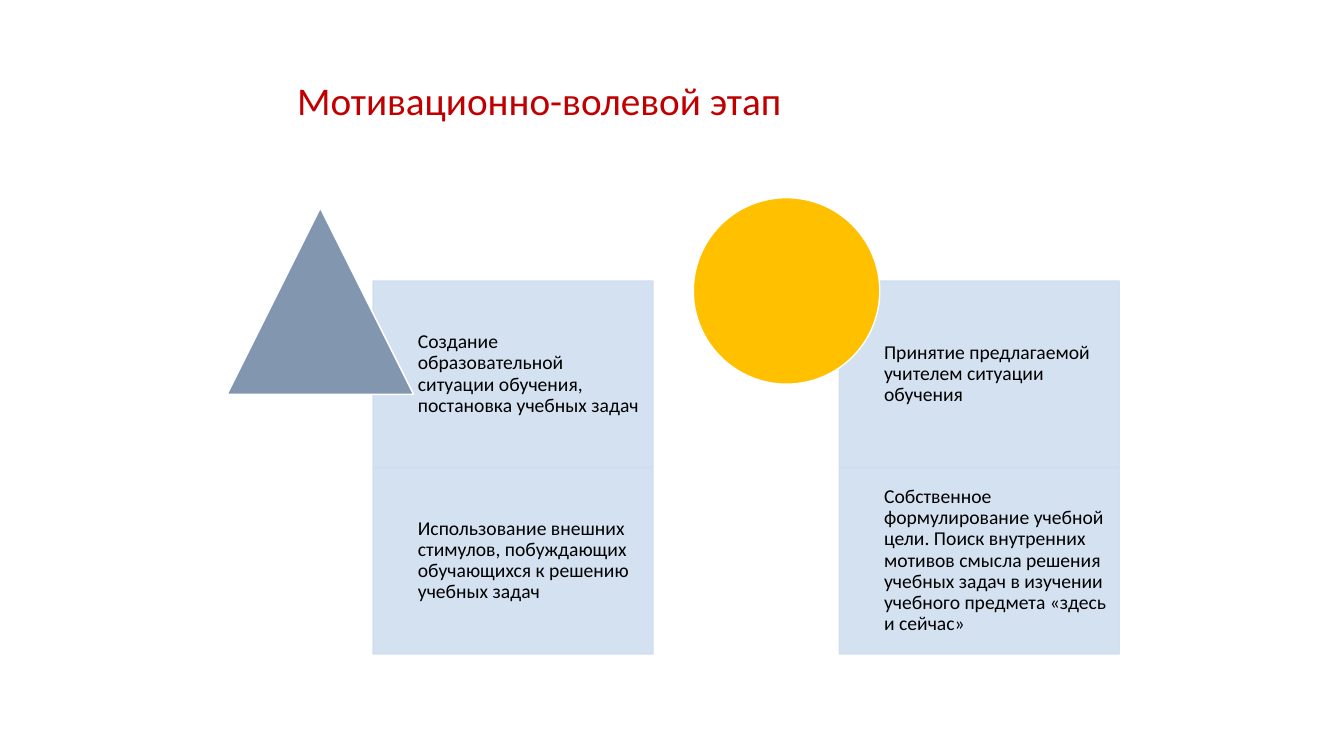
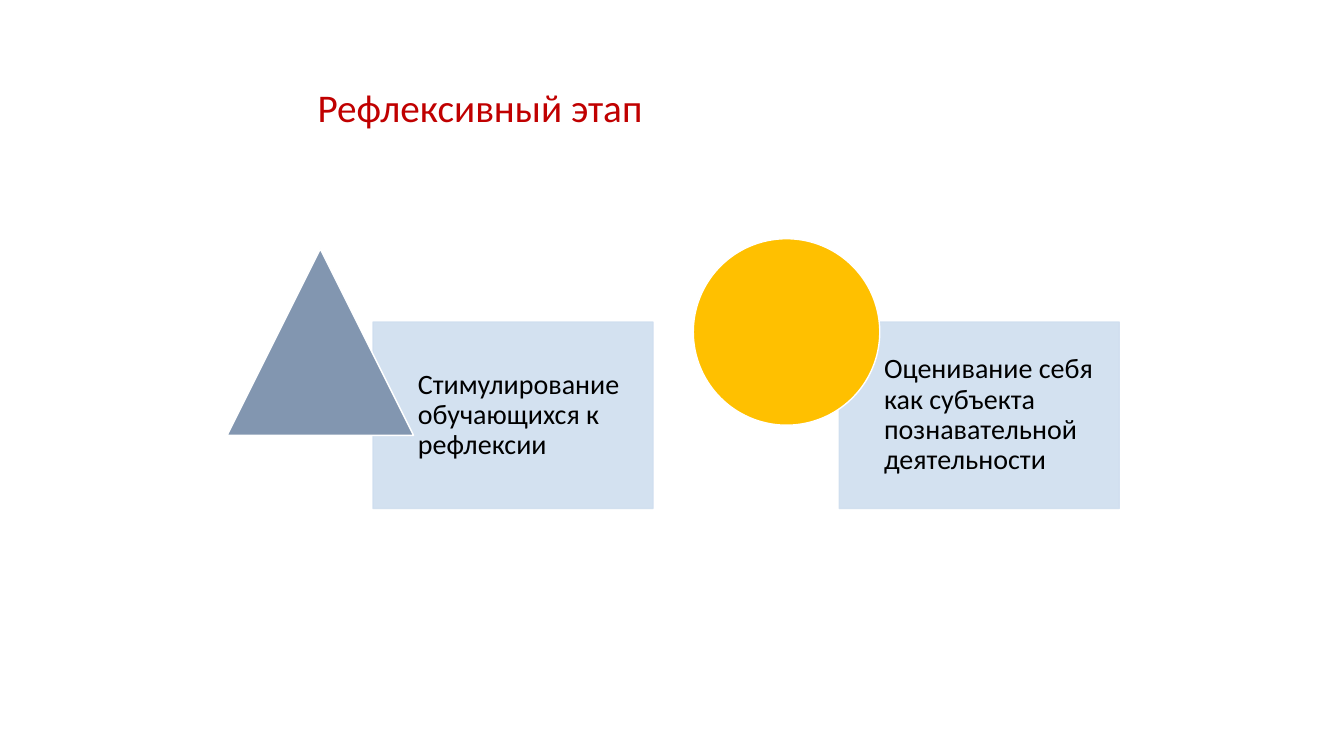
from pptx import Presentation
from pptx.dml.color import RGBColor
from pptx.enum.shapes import MSO_SHAPE as Shape
from pptx.enum.text import MSO_ANCHOR as Anchor, MSO_AUTO_SIZE as Auto, PP_ALIGN as Align
from pptx.oxml.ns import qn
from pptx.util import Pt
from lxml.etree import SubElement

FONT = "Calibri"
RED, BLACK, WHITE = "C00000", "000000", "FFFFFF"
PALE, SLATE, GOLD = "CFDEEF", "8296B0", "FFC000"
CELL_W, CELL_H = 200, 133.2
LEFT, PITCH = 266.5, 333
INDENT = 32
MARK = 133.2
MARK_DX = -104.3
# Preset, colour and offset above the first cell, one per column
MARKS = [(Shape.ISOSCELES_TRIANGLE, SLATE, -52.2), (Shape.OVAL, GOLD, -59.5)]


def color(code):
    return RGBColor.from_string(code)


def assign(item, values):
    for name, value in values.items():
        setattr(item, name, value)


def fade(fill, percent):
    """Set the opacity of a solid fill in the given a:solidFill parent."""
    tone = fill.find(qn("a:solidFill"))[0]
    SubElement(tone, qn("a:alpha"), val=str(percent * 1000))


def write(shape, text, size, code, frame):
    body = shape.text_frame
    body.text = text
    assign(body, {"word_wrap": True, "auto_size": Auto.NONE, **frame})
    para = body.paragraphs[0]
    assign(para, {"alignment": Align.LEFT, "line_spacing": 0.9})
    assign(para.font, {"name": FONT, "size": Pt(size)})
    para.font.color.rgb = color(code)


def add_form(slide, kind, box, fill, line):
    form = slide.shapes.add_shape(kind, *map(Pt, box))
    form.shadow.inherit = False
    form.fill.solid()
    form.fill.fore_color.rgb = color(fill)
    form.line.color.rgb = color(line)
    form.line.width = Pt(1)
    return form


def add_cell(slide, left, top, text, size, inset):
    cell = add_form(slide, Shape.RECTANGLE, (left, top, CELL_W, CELL_H), PALE, PALE)
    props = cell.fill._xPr
    fade(props, 90)
    fade(props.find(qn("a:ln")), 90)
    frame = {"margin_" + side: Pt(inset) for side in ("top", "right", "bottom")}
    frame.update(margin_left=Pt(INDENT), vertical_anchor=Anchor.MIDDLE)
    write(cell, text, size, BLACK, frame)


def add_columns(slide, top, columns, size, inset):
    for col, (texts, (kind, fill, rise)) in enumerate(zip(columns, MARKS)):
        left = LEFT + col * PITCH
        for row, text in enumerate(texts):
            add_cell(slide, left, top + row * CELL_H, text, size, inset)
        add_form(slide, kind, (left + MARK_DX, top + rise, MARK, MARK), fill, WHITE)


def add_slide(deck, title, box):
    slide = deck.slides.add_slide(deck.slide_layouts[5])
    head = slide.shapes.title
    assign(head, dict(zip(("left", "top", "width", "height"), map(Pt, box))))
    write(head, title, 28, RED, {"vertical_anchor": Anchor.TOP})
    return slide


def main():
    deck = Presentation()
    assign(deck, {"slide_width": Pt(960), "slide_height": Pt(540)})

    slide = add_slide(deck, "Мотивационно-волевой этап", (205, 54.7, 448.6, 51))
    add_columns(slide, 200.7, [
        ["Создание образовательной ситуации обучения, постановка учебных задач",
         "Использование внешних стимулов, побуждающих обучающихся к решению "
         "учебных задач"],
        ["Принятие предлагаемой учителем ситуации обучения",
         "Собственное формулирование учебной цели. Поиск внутренних мотивов "
         "смысла решения учебных задач в изучении учебного предмета "
         "«здесь и сейчас»"],
    ], 14, 8)

    slide = add_slide(deck, "Рефлексивный этап", (219.6, 59.8, 580.3, 51))
    add_columns(slide, 230, [
        ["Стимулирование обучающихся к рефлексии"],
        ["Оценивание себя как субъекта познавательной деятельности"],
    ], 20, 11.2)

    deck.save("out.pptx")


if __name__ == "__main__":
    main()
